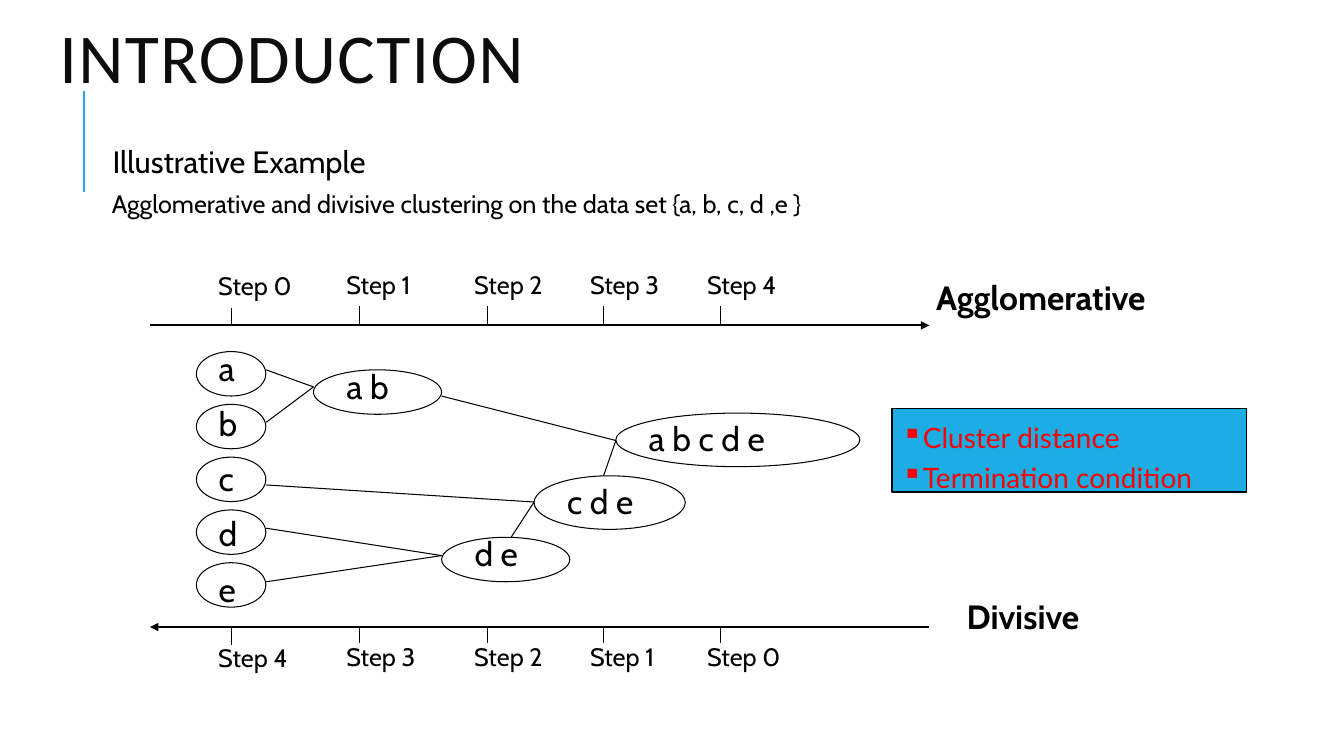
import pptx
import pptx.util
import pptx.dml.color
import pptx.enum.shapes
import pptx.enum.text
import pptx.oxml.ns
import lxml.etree

Cm = pptx.util.Cm
Pt = pptx.util.Pt
RGBColor = pptx.dml.color.RGBColor
ALIGN = pptx.enum.text.PP_ALIGN
SHAPE = pptx.enum.shapes.MSO_SHAPE
qn = pptx.oxml.ns.qn

BLACK = RGBColor(0x00, 0x00, 0x00)
TITLE_GREY = RGBColor(0x0D, 0x0D, 0x0D)
ACCENT_BLUE = RGBColor(0x1C, 0xAD, 0xE4)
RED = RGBColor(0xFF, 0x00, 0x00)

presentation = pptx.Presentation()
presentation.slide_width = Cm(33.87)
presentation.slide_height = Cm(19.05)
slide = presentation.slides.add_slide(presentation.slide_layouts[5])


def add_line(x1, y1, x2, y2, color=BLACK, width=0.75, arrow=False):
    line = slide.shapes.add_connector(
        pptx.enum.shapes.MSO_CONNECTOR.STRAIGHT, Cm(x1), Cm(y1), Cm(x2), Cm(y2))
    line.line.color.rgb = color
    line.line.width = Pt(width)
    if arrow:
        outline = line.line._get_or_add_ln()
        lxml.etree.SubElement(outline, qn("a:tailEnd"), type="triangle")
    lxml.etree.SubElement(line._element.spPr, qn("a:effectLst"))


def add_label(text, left, top, width, size, bold=False, align=ALIGN.LEFT):
    box = slide.shapes.add_textbox(Cm(left), Cm(top), Cm(width), Cm(size * 0.054))
    box.text_frame.word_wrap = True
    paragraph = box.text_frame.paragraphs[0]
    paragraph.alignment = align
    run = paragraph.add_run()
    run.text = text
    run.font.name = "Cabin"
    run.font.size = Pt(size)
    run.font.bold = bold
    run.font.color.rgb = BLACK


# Title and accent line
add_line(2.11, 4.83, 2.11, 2.29, ACCENT_BLUE, 1.5)
title = slide.shapes.title
title.left, title.top, title.width, title.height = Cm(1.24), Cm(0), Cm(32.61), Cm(3.18)
title.text_frame.auto_size = pptx.enum.text.MSO_AUTO_SIZE.NONE
title.text_frame.vertical_anchor = pptx.enum.text.MSO_ANCHOR.MIDDLE
paragraph = title.text_frame.paragraphs[0]
paragraph.alignment = ALIGN.LEFT
paragraph.line_spacing = 0.8
run = paragraph.add_run()
run.text = "INTRODUCTION"
run.font.name = "Calibri"
run.font.size = Pt(50)
run.font.color.rgb = TITLE_GREY
run.font._element.set("spc", "100")

# Introductory text
intro = slide.shapes.add_textbox(Cm(1.24), Cm(3.38), Cm(31.65), Cm(2.3)).text_frame
intro.word_wrap = True
intro.margin_left = intro.margin_right = intro.margin_top = intro.margin_bottom = Cm(0.13)
intro_lines = [
    ("Illustrative Example", 22, 0, 2, 1.47),
    ("Agglomerative and divisive clustering on the data set {a, b, c, d ,e }", 18, 2, 4, 1.45),
]
for index, (text, size, before, after, margin) in enumerate(intro_lines):
    paragraph = intro.add_paragraph() if index else intro.paragraphs[0]
    paragraph._p.get_or_add_pPr().set("marL", str(Cm(margin)))
    paragraph.line_spacing = 1.1
    paragraph.space_before = Pt(before)
    paragraph.space_after = Pt(after)
    run = paragraph.add_run()
    run.text = text
    run.font.name = "Cabin"
    run.font.size = Pt(size)
    run.font.color.rgb = BLACK

# Blue box with the two parameters
panel = slide.shapes.add_shape(SHAPE.RECTANGLE, Cm(22.48), Cm(10.29), Cm(8.94), Cm(2.11))
panel.shadow.inherit = False
panel.fill.solid()
panel.fill.fore_color.rgb = ACCENT_BLUE
panel.line.color.rgb = BLACK
panel.line.width = Pt(0.75)
panel.text_frame.word_wrap = True
panel.text_frame.vertical_anchor = pptx.enum.text.MSO_ANCHOR.TOP
panel.text_frame.margin_bottom = Cm(0)
for index, text in enumerate(["Cluster distance", "Termination condition"]):
    paragraph = panel.text_frame.add_paragraph() if index else panel.text_frame.paragraphs[0]
    paragraph.alignment = ALIGN.LEFT
    paragraph.line_spacing = 1.2
    properties = paragraph._p.get_or_add_pPr()
    properties.set("marL", str(Cm(0.42)))
    properties.set("indent", str(Cm(-0.42)))
    lxml.etree.SubElement(properties, qn("a:buChar"), char="▪")
    run = paragraph.add_run()
    run.text = text
    run.font.name = "Lato"
    run.font.size = Pt(20)
    run.font.color.rgb = RED

# Step axes: agglomerative runs right, divisive runs left
add_line(3.78, 8.2, 23.42, 8.2, width=1.5, arrow=True)
add_line(23.42, 15.8, 3.78, 15.8, width=1.5, arrow=True)
step_positions = [5.84, 9.07, 12.29, 15.21, 18.16]
for step, x in enumerate(step_positions):
    drop = 0 if step else 0.04
    for number, tick_top, label_top in [(step, 7.72, 6.65), (4 - step, 15.77, 16.03)]:
        add_line(x, tick_top + drop, x, tick_top + drop + 0.44)
        add_label(f"Step {number}", x - 0.59, label_top + drop, 2.92, 18)

# Clusters: label, ellipse left, top, width, height, label offset x, y
clusters = [(letter, 4.95, 8.86 + 1.33 * row, 1.75, 1.12, 0.31, 0.06 * row - 0.22)
            for row, letter in enumerate("abcde")]
clusters += [
    ("a b", 7.9, 9.32, 3.23, 1.12, 0.58, -0.23),
    ("d e", 11.13, 13.54, 3.23, 1.12, 0.58, -0.23),
    ("c d e", 13.46, 11.99, 3.81, 1.35, 0.58, 0),
    ("a b c d e", 15.52, 10.41, 6.15, 1.35, 0.58, 0),
]
for text, left, top, width, height, offset_x, offset_y in clusters:
    ellipse = slide.shapes.add_shape(SHAPE.OVAL, Cm(left), Cm(top), Cm(width), Cm(height))
    ellipse.shadow.inherit = False
    ellipse.fill.background()
    ellipse.line.color.rgb = BLACK
    ellipse.line.width = Pt(0.75)
    add_label(text, left + offset_x, top + offset_y, width - offset_x, 24)

# Links between clusters
links = [
    (6.71, 9.32, 7.9, 9.75),
    (6.71, 10.64, 7.9, 9.75),
    (6.71, 13.31, 11.13, 14),
    (6.71, 14.66, 11.13, 14),
    (6.71, 12.22, 13.46, 12.65),
    (12.88, 13.54, 13.46, 12.65),
    (11.13, 9.98, 15.52, 11.1),
    (15.21, 11.99, 15.52, 11.1),
]
for link in links:
    add_line(*link)

# Direction names
add_label("Agglomerative", 23.22, 6.86, 6.02, 24, True, ALIGN.CENTER)
add_label("Divisive", 23.98, 14.88, 3.6, 24, True, ALIGN.CENTER)

presentation.save("out.pptx")
